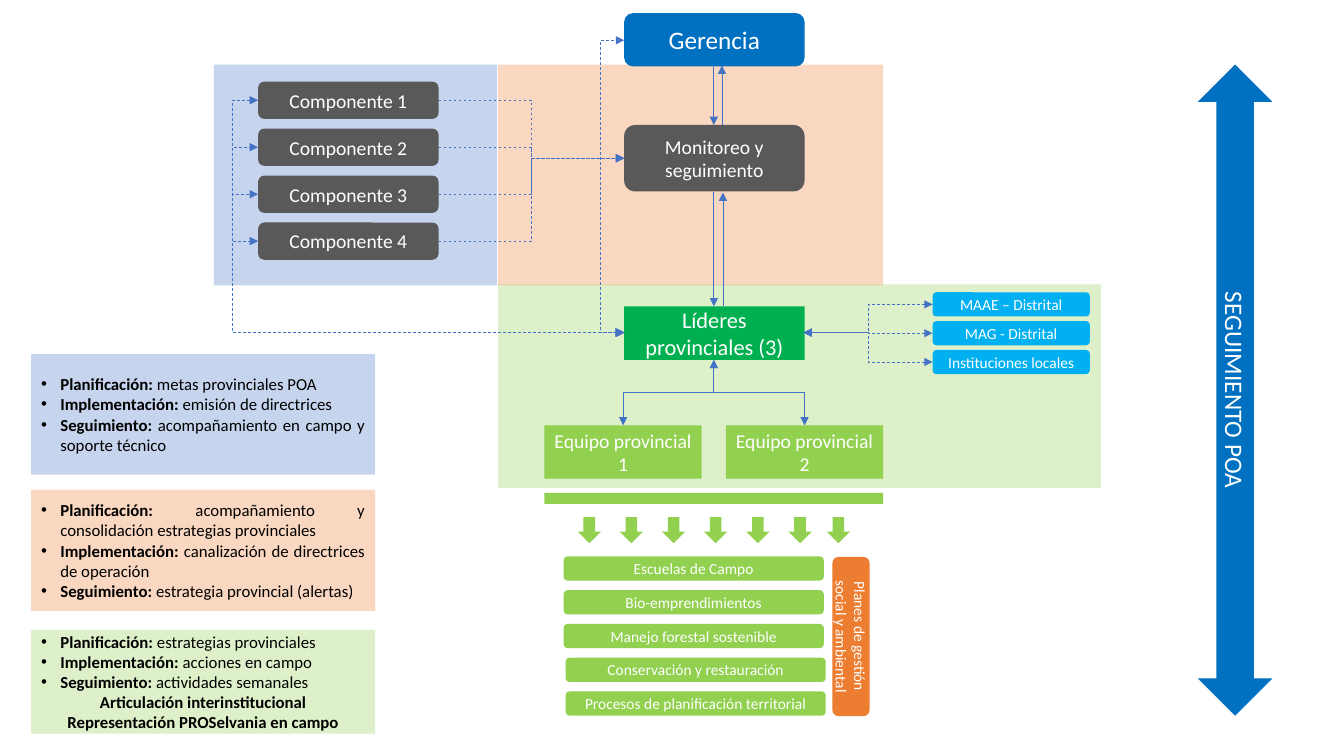
"""Build the organisation chart slide for POA follow-up."""
import pptx
import pptx.util
import pptx.dml.color
import pptx.enum.dml
import pptx.enum.shapes
import pptx.enum.text
import pptx.oxml.ns
from lxml import etree

SHAPE = pptx.enum.shapes.MSO_SHAPE
LINK = pptx.enum.shapes.MSO_CONNECTOR
ALIGN = pptx.enum.text.PP_ALIGN
COLUMNS, ROWS = 1333, 750
CELL = pptx.util.Inches(0.01)
COLORS = {
    "blue": "0070C0", "gray": "595959", "green": "00B050", "lime": "92D050",
    "sky": "00B0F0", "orange": "ED7D31", "accent": "4472C4",
    "white": "FFFFFF", "black": "000000",
}
PANELS = [
    ((494, 64, 382, 219), "orange"),
    ((494, 282, 598, 202), "lime"),
    ((212, 64, 281, 219), "accent"),
]
BOXES = [
    ("Gerencia", (619, 13, 179, 53), SHAPE.ROUNDED_RECTANGLE, "blue", 18),
    ("Monitoreo y seguimiento", (619, 124, 179, 66), SHAPE.ROUNDED_RECTANGLE, "gray", 14),
    ("Líderes provinciales (3)", (619, 304, 179, 53), SHAPE.RECTANGLE, "green", 16),
    ("Equipo provincial 1", (540, 422, 156, 53), SHAPE.RECTANGLE, "lime", 14),
    ("Equipo provincial 2", (720, 422, 156, 53), SHAPE.RECTANGLE, "lime", 14),
]
TURNED = [
    ("SEGUIMIENTO POA", (902, 350, 646, 74), SHAPE.LEFT_RIGHT_ARROW, "blue", 18),
    ("Planes de gestión social y ambiental", (765, 613, 158, 37),
     SHAPE.ROUNDED_RECTANGLE, "orange", 11),
]
COMPONENTS = ["Componente 1", "Componente 2", "Componente 3", "Componente 4"]
PARTNERS = ["MAAE – Distrital", "MAG - Distrital", "Instituciones locales"]
ACTIVITIES = [
    ("Escuelas de Campo", 559), ("Bio-emprendimientos", 559),
    ("Manejo forestal sostenible", 559), ("Conservación y restauración", 561),
    ("Procesos de planificación territorial", 561),
]
ARROW_COLUMNS = [573 + 41.8 * step for step in range(6)] + [820]
STRAIGHT = [
    ((708, 66), (708, 124)), ((716, 124), (716, 65)),
    ((708, 190), (708, 304)), ((717, 304), (717, 191)),
]
NOTES = [
    ((31, 351, 341, 120), "accent", [
        ("Planificación:", " metas provinciales POA"),
        ("Implementación:", " emisión de directrices"),
        ("Seguimiento:", " acompañamiento en campo y soporte técnico")], []),
    ((31, 486, 341, 120), "orange", [
        ("Planificación:", " acompañamiento y consolidación estrategias provinciales"),
        ("Implementación:", " canalización de directrices de operación"),
        ("Seguimiento:", " estrategia provincial (alertas)")], []),
    ((31, 625, 341, 103), "lime", [
        ("Planificación:", " estrategias provinciales"),
        ("Implementación:", " acciones en campo"),
        ("Seguimiento:", " actividades semanales")],
     ["Articulación interinstitucional", "Representación PROSelvania en campo"]),
]


def cells(*values):
    return [round(value * CELL) for value in values]


def rgb(name):
    return pptx.dml.color.RGBColor.from_string(COLORS[name])


def child(parent, tag, **attributes):
    return etree.SubElement(parent, pptx.oxml.ns.qn(tag), attributes)


def write(para, text, size, color="white", bold=False):
    span = para.add_run()
    span.text = text
    for key, value in {"name": "Calibri", "size": pptx.util.Pt(size), "bold": bold}.items():
        setattr(span.font, key, value)
    span.font.color.rgb = rgb(color)


def add_box(page, area, color, kind=SHAPE.RECTANGLE, text="", size=14, clear=False, turn=0):
    box = page.shapes.add_shape(kind, *cells(*area))
    box.shadow.inherit = False
    box.rotation = turn
    box.fill.solid()
    box.fill.fore_color.rgb = rgb(color)
    box.line.fill.background()
    if clear:
        tint = box.fill._xPr.find(".//" + pptx.oxml.ns.qn("a:srgbClr"))
        child(tint, "a:alpha", val="30000")
    box.text_frame.word_wrap = True
    box.text_frame.vertical_anchor = pptx.enum.text.MSO_ANCHOR.MIDDLE
    if text:
        para = box.text_frame.paragraphs[0]
        para.alignment = ALIGN.CENTER
        write(para, text, size)
    return box


def add_link(page, start, end, bend=None, dashed=False, both=False):
    kind = LINK.STRAIGHT if bend is None else LINK.ELBOW
    link = page.shapes.add_connector(kind, *cells(*start, *end))
    link.line.color.rgb = rgb("accent")
    link.line.width = pptx.util.Pt(0.5)
    if dashed:
        link.line.dash_style = pptx.enum.dml.MSO_LINE.DASH
    outline = link.line._get_or_add_ln()
    for tag in ["a:headEnd", "a:tailEnd"] if both else ["a:tailEnd"]:
        child(outline, tag, type="triangle")
    properties = link._element.spPr
    child(properties, "a:effectLst")
    if bend is not None:
        share = (bend - start[0]) / (end[0] - start[0])
        guides = properties.prstGeom.get_or_add_avLst()
        child(guides, "a:gd", name="adj1", fmla=f"val {round(share * 100000)}")
    return link


def add_drop(page, start, end):
    middle_x, middle_y = (start[0] + end[0]) / 2, (start[1] + end[1]) / 2
    half_run, half_rise = (end[1] - start[1]) / 2, (end[0] - start[0]) / 2
    link = add_link(page, (middle_x - half_run, middle_y + half_rise),
                    (middle_x + half_run, middle_y - half_rise), middle_x, both=True)
    link._element.spPr.find(pptx.oxml.ns.qn("a:xfrm")).set("rot", "5400000")


def add_note(page, area, color, points, closing):
    frame = add_box(page, area, color, clear=True).text_frame
    paras = [frame.paragraphs[0]]
    paras += [frame.add_paragraph() for _ in (points + closing)[1:]]
    for para, (label, detail) in zip(paras, points):
        para.alignment = ALIGN.JUSTIFY
        write(para, label, 12, "black", True)
        write(para, detail, 12, "black")
        layout = para._p.get_or_add_pPr()
        layout.set("marL", str(19 * CELL))
        layout.set("indent", str(-19 * CELL))
        child(layout, "a:buFont", typeface="Arial")
        child(layout, "a:buChar", char="•")
    for para, text in zip(paras[len(points):], closing):
        para.alignment = ALIGN.CENTER
        write(para, text, 12, "black", True)


def main():
    deck = pptx.Presentation()
    deck.slide_width, deck.slide_height = cells(COLUMNS, ROWS)
    page = deck.slides.add_slide(deck.slide_layouts[6])
    rounded = SHAPE.ROUNDED_RECTANGLE
    for area, color in PANELS:
        add_box(page, area, color, clear=True)
    for text, area, kind, color, size in BOXES:
        add_box(page, area, color, kind, text, size)
    for text, area, kind, color, size in TURNED:
        add_box(page, area, color, kind, text, size, turn=90)
    for row, text in enumerate(COMPONENTS):
        top = 81 + 46.6 * row
        middle = top + 18.5
        add_box(page, (256, top, 179, 37), "gray", rounded, text, 14)
        add_link(page, (435, middle), (619, 157), 527, dashed=True)
        add_link(page, (619, 330), (256, middle), 231, dashed=True, both=True)
    for row, text in enumerate(PARTNERS):
        top = 290 + 28.6 * row
        add_box(page, (925, top, 156, 24), "sky", rounded, text, 11)
        add_link(page, (925, top + 12), (797, 330), 861, dashed=True, both=True)
    for row, (text, left) in enumerate(ACTIVITIES):
        add_box(page, (left, 552 + 33.5 * row, 258, 24), "lime", rounded, text, 11)
    add_box(page, (540, 489, 336, 11), "lime")
    for left in ARROW_COLUMNS:
        add_box(page, (left, 513, 23, 26), "lime", SHAPE.DOWN_ARROW)
    for start, end in STRAIGHT:
        add_link(page, start, end)
    add_link(page, (620, 330), (619, 40), 595, dashed=True, both=True)
    for column in (618, 798):
        add_drop(page, (708, 357), (column, 422))
    for note in NOTES:
        add_note(page, *note)
    deck.save("out.pptx")


if __name__ == "__main__":
    main()
